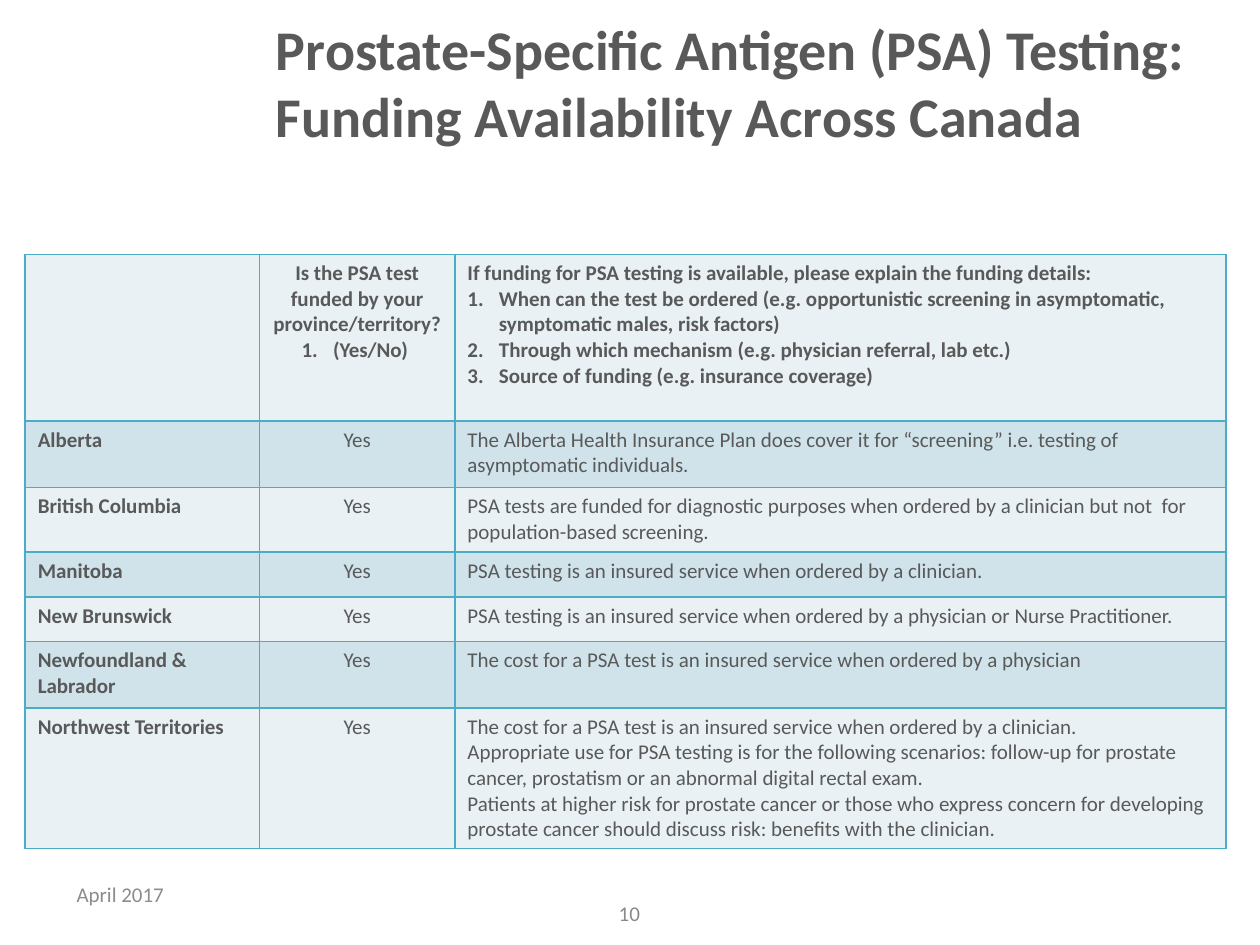
import pptx
import pptx.dml.color
import pptx.enum.text
import pptx.oxml.ns
import pptx.util
from lxml import etree
from pptx.util import Inches

ALIGN = pptx.enum.text.PP_ALIGN
TEXT_COLOR = "595959"
BORDER_COLOR = "4BACC6"
ROW_FILLS = ["E9F1F5", "D0E3EA"]
COLUMN_WIDTHS = [1.86, 1.55, 6.12]
ROW_HEIGHTS = [1.32, 0.53, 0.51, 0.36, 0.35, 0.53, 1.11]

QUESTION = ["Is the PSA test funded by your province/territory? ", "(Yes/No) "]
DETAILS = [
    "If funding for PSA testing is available, please explain the funding details:",
    "When can the test be ordered (e.g. opportunistic screening in asymptomatic, "
    "symptomatic males, risk factors)",
    "Through which mechanism (e.g. physician referral, lab etc.)",
    "Source of funding (e.g. insurance coverage)",
]
FUNDING = [
    ("Alberta", ["The Alberta Health Insurance Plan does cover it for “screening” i.e. "
                 "testing of asymptomatic individuals."]),
    ("British Columbia", ["PSA tests are funded for diagnostic purposes when ordered by a "
                          "clinician but not  for population-based screening."]),
    ("Manitoba", ["PSA testing is an insured service when ordered by a clinician."]),
    ("New Brunswick", ["PSA testing is an insured service when ordered by a physician or "
                       "Nurse Practitioner."]),
    ("Newfoundland & Labrador", ["The cost for a PSA test is an insured service when ordered "
                                 "by a physician"]),
    ("Northwest Territories", [
        "The cost for a PSA test is an insured service when ordered by a clinician.",
        "Appropriate use for PSA testing is for the following scenarios: follow-up for "
        "prostate cancer, prostatism or an abnormal digital rectal exam.",
        "Patients at higher risk for prostate cancer or those who express concern for "
        "developing prostate cancer should discuss risk: benefits with the clinician.",
    ]),
]


def rgb(color):
    return pptx.dml.color.RGBColor.from_string(color)


def add_element(parent, tag, **attributes):
    return etree.SubElement(parent, pptx.oxml.ns.qn(tag), attributes)


def format_paragraph(paragraph, size, color=TEXT_COLOR, bold=False, align=ALIGN.LEFT):
    paragraph.alignment = align
    paragraph.font.name = "Calibri"
    paragraph.font.size = pptx.util.Pt(size)
    paragraph.font.bold = bold
    paragraph.font.color.rgb = rgb(color)


def number_paragraph(paragraph):
    properties = paragraph._p.get_or_add_pPr()
    properties.set("marL", str(Inches(0.25)))
    properties.set("indent", str(Inches(-0.25)))
    add_element(properties, "a:buFont", typeface="+mj-lt")
    add_element(properties, "a:buAutoNum", type="arabicPeriod")


def set_borders(cell):
    properties = cell._tc.get_or_add_tcPr()
    for side in ("a:lnL", "a:lnR", "a:lnT", "a:lnB"):
        line = add_element(properties, side, w=str(pptx.util.Pt(1)))
        fill = add_element(line, "a:solidFill")
        add_element(fill, "a:srgbClr", val=BORDER_COLOR)


def fill_cell(cell, lines, fill, bold, align, numbered):
    """Write the lines into the cell; numbered lists every line after the first."""
    set_borders(cell)
    cell.fill.solid()
    cell.fill.fore_color.rgb = rgb(fill)
    cell.text = "\n".join(lines)
    for index, paragraph in enumerate(cell.text_frame.paragraphs):
        if numbered and index > 0:
            number_paragraph(paragraph)
        format_paragraph(paragraph, 12, bold=bold, align=align)


def add_title(slide, text):
    title = slide.shapes.title
    title.left, title.top = Inches(2.09), Inches(0.29)
    title.width, title.height = Inches(7.8), Inches(0.71)
    title.text_frame.text = text
    title.text_frame.auto_size = pptx.enum.text.MSO_AUTO_SIZE.NONE
    title.text_frame.vertical_anchor = pptx.enum.text.MSO_ANCHOR.MIDDLE
    format_paragraph(title.text_frame.paragraphs[0], 32, bold=True)


def add_funding_table(slide):
    rows = [([], QUESTION, DETAILS)]
    rows += [([region], ["Yes"], details) for region, details in FUNDING]
    table = slide.shapes.add_table(
        len(rows), len(COLUMN_WIDTHS), Inches(0.2), Inches(2.02),
        Inches(sum(COLUMN_WIDTHS)), Inches(sum(ROW_HEIGHTS))).table
    for column, width in zip(table.columns, COLUMN_WIDTHS):
        column.width = Inches(width)
    for row, height in zip(table.rows, ROW_HEIGHTS):
        row.height = Inches(height)
    for row_index, row in enumerate(rows):
        header = row_index == 0
        for column_index, lines in enumerate(row):
            fill_cell(table.cell(row_index, column_index), lines, ROW_FILLS[row_index % 2],
                      bold=header or column_index == 0,
                      align=ALIGN.CENTER if column_index == 1 else ALIGN.LEFT,
                      numbered=header)


def add_footer(slide, text, left, top, width, color, align):
    box = slide.shapes.add_textbox(Inches(left), Inches(top), Inches(width), Inches(0.4))
    box.text_frame.word_wrap = True
    box.text_frame.vertical_anchor = pptx.enum.text.MSO_ANCHOR.MIDDLE
    box.text_frame.text = text
    format_paragraph(box.text_frame.paragraphs[0], 12, color, align=align)


def main():
    presentation = pptx.Presentation()
    presentation.slide_width, presentation.slide_height = Inches(10), Inches(7.5)
    slide = presentation.slides.add_slide(presentation.slide_layouts.get_by_name("Title Only"))
    add_title(slide, "Prostate-Specific Antigen (PSA) Testing: "
                     "Funding Availability Across Canada")
    add_funding_table(slide)
    add_footer(slide, "April 2017", 0.51, 6.9, 3.17, "8C8C8C", ALIGN.LEFT)
    add_footer(slide, "10", 3.83, 7.05, 2.33, "898989", ALIGN.CENTER)
    presentation.save("out.pptx")


if __name__ == "__main__":
    main()
